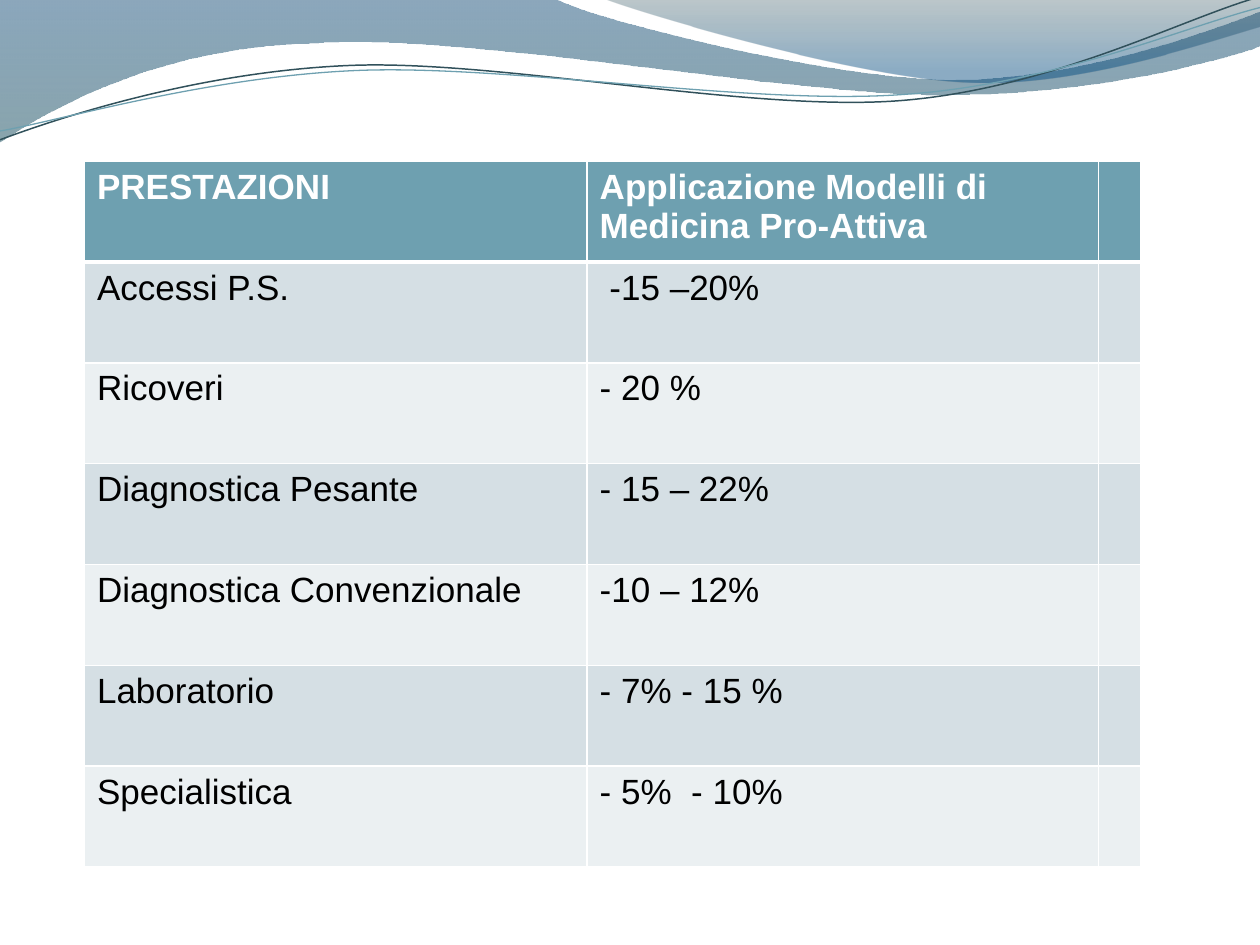
import math

import lxml.etree
import pptx
import pptx.dml.color
import pptx.oxml
import pptx.oxml.ns
import pptx.util

WIDE, HIGH = 10, 7.5
FONT, SIZE = "Arial", 20
WHITE, BLACK, TEAL = "FFFFFF", "000000", "6EA0B0"
BANDS = ["D5DFE4", "EBF0F2"]
UNITS = 10000  # pen units to the inch

ROWS = [
    ("PRESTAZIONI", "Applicazione Modelli di Medicina Pro-Attiva", ""),
    ("Accessi P.S.", " -15 –20%", ""),
    ("Ricoveri", "- 20 %", ""),
    ("Diagnostica Pesante", "- 15 – 22%", ""),
    ("Diagnostica Convenzionale", "-10 – 12%", ""),
    ("Laboratorio", "- 7% - 15 %", ""),
    ("Specialistica", "- 5%  - 10%", ""),
]
LEFT, TOP, ROW = 0.67, 1.28, 0.8
COLS = [3.99, 4.06, 0.33]

# Outlines: a pair is a corner, six numbers are a Bézier curve.
# Stops: position, colour, opacity in percent.
WAVES = [
    {"track": [(0, 0), (4.4, -0.01),
               (4.76, 0.17, 6.64, 0.63, 7.58, 0.63),
               (8.53, 0.63, 9.58, 0.26, 10, 0.09), (10.01, 0.36),
               (9.83, 0.44, 8.7, 0.76, 7.46, 0.75),
               (6.22, 0.75, 3.82, 0.28, 2.57, 0.34),
               (1.29, 0.36, 0.46, 0.83, -0.01, 1.13)],
     "stops": [(0, "003D6B", 45), (1, "275A69", 55)]},
    {"track": [(4.79, -0.01),
               (5.09, 0.11, 6.82, 0.62, 7.69, 0.65),
               (8.56, 0.69, 9.61, 0.32, 10, 0.21), (10, 0)],
     "stops": [(0, "244751", 30), (0.8, "00497F", 45)]},
    {"track": [(0, 1.11),
               (0.48, 0.93, 1.58, 0.57, 2.77, 0.52),
               (3.95, 0.47, 5.93, 0.89, 7.13, 0.8),
               (8.33, 0.71, 9.38, 0.15, 9.98, -0.02)],
     "line": ("31515B", 0.85), "tilt": -2.7, "hub": (4.99, 0.58)},
    {"track": [(0, 1.04),
               (0.47, 0.96, 1.64, 0.61, 2.83, 0.56),
               (4.03, 0.51, 5.97, 0.84, 7.17, 0.75),
               (8.36, 0.67, 9.41, 0.21, 10, 0.06)],
     "line": (TEAL, 0.75), "tilt": -2.7, "hub": (5, 0.59)},
]


def tint(code):
    return pptx.dml.color.RGBColor.from_string(code)


def turn(spot, angle, hub):
    """Turn a point clockwise about the hub."""
    x, y = spot[0] - hub[0], spot[1] - hub[1]
    c, s = math.cos(math.radians(angle)), math.sin(math.radians(angle))
    return hub[0] + x * c - y * s, hub[1] + x * s + y * c


def bend(shape, track):
    """Join each three straight steps of a Bézier part into one curve."""
    tag = pptx.oxml.ns.qn
    steps = iter(list(shape.element.iter(tag("a:lnTo"))))
    for part in track[1:]:
        first = next(steps)
        if len(part) == 2:
            continue
        curve = lxml.etree.Element(tag("a:cubicBezTo"))
        first.addprevious(curve)
        for step in (first, next(steps), next(steps)):
            curve.append(step[0])
            step.getparent().remove(step)


def shade(shape, stops):
    """Fill from top to bottom with half-clear colours."""
    shape.fill.gradient()
    shape.fill.gradient_angle = 270
    for stop, (place, code, _) in zip(shape.fill.gradient_stops, stops):
        stop.position = place
        stop.color.rgb = tint(code)
    tag = pptx.oxml.ns.qn("a:srgbClr")
    for node, (_, _, share) in zip(shape.element.spPr.iter(tag), stops):
        node.append(pptx.oxml.parse_xml(
            f'<a:alpha {pptx.oxml.ns.nsdecls("a")} val="{share * 1000}"/>'))


def wave(slide, track, stops=None, line=None, tilt=0, hub=(0, 0)):
    spots = [turn(part[i:i + 2], -tilt, hub)
             for part in track for i in range(0, len(part), 2)]
    spots = [(x * UNITS, y * UNITS) for x, y in spots]
    pen = slide.shapes.build_freeform(
        *spots[0], scale=pptx.util.Inches(1) / UNITS)
    pen.add_line_segments(spots[1:], close=bool(stops))
    shape = pen.convert_to_shape()
    bend(shape, track)
    shape.rotation = tilt
    shape.shadow.inherit = False
    if stops:
        shade(shape, stops)
        shape.line.fill.background()
    else:
        code, width = line
        shape.fill.background()
        shape.line.color.rgb = tint(code)
        shape.line.width = pptx.util.Pt(width)


def edge(cell, side, width):
    cell._tc.get_or_add_tcPr().append(pptx.oxml.parse_xml(
        f'<a:{side} {pptx.oxml.ns.nsdecls("a")} w="{pptx.util.Pt(width)}">'
        f'<a:solidFill><a:srgbClr val="{WHITE}"/></a:solidFill></a:{side}>'))


def write(frame, text, size=SIZE, color=BLACK, bold=False):
    run = frame.paragraphs[0].add_run()
    run.text = text
    run.font.name = FONT
    run.font.size = pptx.util.Pt(size)
    run.font.bold = bold
    run.font.color.rgb = tint(color)


def grid(slide):
    box = [pptx.util.Inches(n)
           for n in (LEFT, TOP, sum(COLS), ROW * len(ROWS))]
    table = slide.shapes.add_table(len(ROWS), len(COLS), *box).table
    table.horz_banding = False
    for col, width in zip(table.columns, COLS):
        col.width = pptx.util.Inches(width)
    for r, row in enumerate(ROWS):
        table.rows[r].height = pptx.util.Inches(ROW)
        head = r == 0
        for c, text in enumerate(row):
            cell = table.cell(r, c)
            for side, width in (("lnL", 1), ("lnR", 1),
                                ("lnT", 3 if r == 1 else 1),
                                ("lnB", 3 if head else 1)):
                edge(cell, side, width)
            cell.fill.solid()
            cell.fill.fore_color.rgb = tint(TEAL if head else BANDS[(r - 1) % 2])
            if text:
                write(cell.text_frame, text, bold=head,
                      color=WHITE if head else BLACK)


def main():
    deck = pptx.Presentation()
    deck.slide_width = pptx.util.Inches(WIDE)
    deck.slide_height = pptx.util.Inches(HIGH)
    slide = deck.slides.add_slide(deck.slide_layouts[6])
    for item in WAVES:
        wave(slide, **item)
    grid(slide)
    deck.save("out.pptx")


if __name__ == "__main__":
    main()
